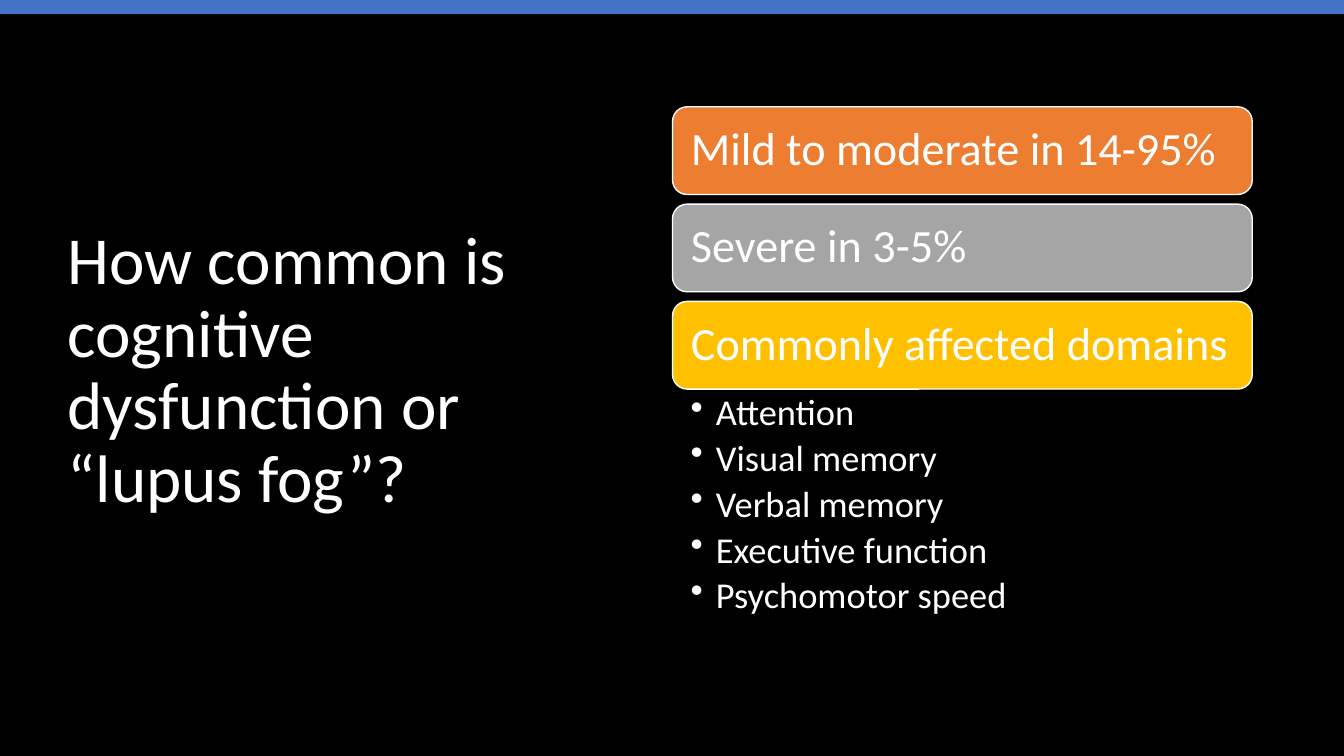
from pptx import Presentation
from pptx.dml.color import RGBColor
from pptx.enum.shapes import MSO_SHAPE
from pptx.enum.text import MSO_ANCHOR, MSO_AUTO_SIZE, PP_ALIGN
from pptx.oxml.ns import qn
from pptx.util import Inches, Pt
from lxml import etree

FONT = "Calibri"
WHITE = "FFFFFF"
CARDS = [
    ("Mild to moderate in 14-95%", "ED7D31"),
    ("Severe in 3-5%", "A5A5A5"),
    ("Commonly affected domains", "FFC000"),
]
DOMAINS = ["Attention", "Visual memory", "Verbal memory",
           "Executive function", "Psychomotor speed"]
COLUMN_LEFT, COLUMN_WIDTH = 6.67, 5.75
CARD_TOP, CARD_HEIGHT, CARD_PITCH = 1.06, 0.87, 0.965


def rgb(color):
    return RGBColor.from_string(color)


def set_frame(tf, anchor, insets):
    tf.word_wrap = True
    tf.auto_size = MSO_AUTO_SIZE.NONE
    tf.vertical_anchor = anchor
    left, top, right, bottom = insets
    tf.margin_left, tf.margin_top = Inches(left), Inches(top)
    tf.margin_right, tf.margin_bottom = Inches(right), Inches(bottom)


def write(p, text, size):
    p.alignment = PP_ALIGN.LEFT
    p.line_spacing = 0.9
    r = p.add_run()
    r.text = text
    r.font.size = Pt(size)
    r.font.name = FONT
    r.font.color.rgb = rgb(WHITE)


def add_box(s, kind, left, top, width, height, fill):
    sp = s.shapes.add_shape(kind, Inches(left), Inches(top),
                            Inches(width), Inches(height))
    sp.shadow.inherit = False
    sp.fill.solid()
    sp.fill.fore_color.rgb = rgb(fill)
    sp.line.fill.background()
    return sp


def add_title(s, text):
    sp = s.shapes.title
    sp.left, sp.top = Inches(0.57), Inches(0.68)
    sp.width, sp.height = Inches(5.67), Inches(6.02)
    set_frame(sp.text_frame, MSO_ANCHOR.MIDDLE, (0.1, 0.05, 0.1, 0.05))
    write(sp.text_frame.paragraphs[0], text, 48)


def add_card(s, top, text, fill):
    sp = add_box(s, MSO_SHAPE.ROUNDED_RECTANGLE, COLUMN_LEFT, top,
                 COLUMN_WIDTH, CARD_HEIGHT, fill)
    sp.line.color.rgb = rgb(WHITE)
    sp.line.width = Pt(1)
    set_frame(sp.text_frame, MSO_ANCHOR.MIDDLE, (0.14,) * 4)
    write(sp.text_frame.paragraphs[0], text, 33)


def add_bullets(s, top, height, items):
    sp = s.shapes.add_textbox(Inches(COLUMN_LEFT), Inches(top),
                              Inches(COLUMN_WIDTH), Inches(height))
    tf = sp.text_frame
    set_frame(tf, MSO_ANCHOR.TOP, (0.18, 0.05, 0.26, 0.05))
    for i, item in enumerate(items):
        p = tf.add_paragraph() if i else tf.paragraphs[0]
        write(p, item, 26)
        p.level = 1
        p.space_after = Pt(4.7)
        pPr = p._p.get_or_add_pPr()
        pPr.set("marL", str(Inches(0.25)))
        pPr.set("indent", str(Inches(-0.25)))
        etree.SubElement(pPr, qn("a:buChar")).set("char", "•")


def main():
    prs = Presentation()
    prs.slide_width, prs.slide_height = Inches(13.33), Inches(7.5)
    s = prs.slides.add_slide(prs.slide_layouts[5])
    s.background.fill.solid()
    s.background.fill.fore_color.rgb = rgb("000000")

    # Title and top band
    add_title(s, "How common is cognitive dysfunction or “lupus fog”?")
    add_box(s, MSO_SHAPE.RECTANGLE, 0, 0, 13.33, 0.14, "4472C4")

    # Prevalence cards
    for i, (text, fill) in enumerate(CARDS):
        add_card(s, CARD_TOP + i * CARD_PITCH, text, fill)

    # Affected domains
    add_bullets(s, 3.86, 2.47, DOMAINS)
    prs.save("out.pptx")


if __name__ == "__main__":
    main()
